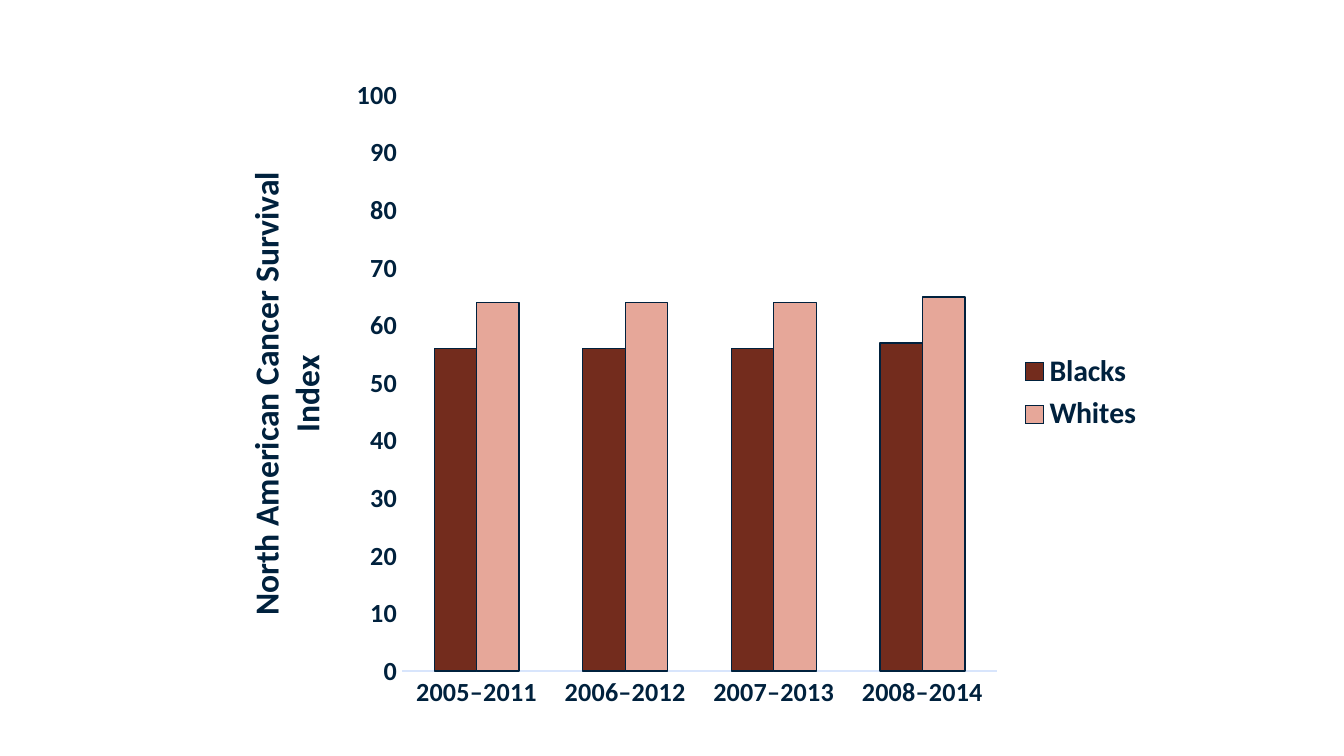
from dataclasses import dataclass

from lxml import etree
from pptx import Presentation
from pptx.chart.data import CategoryChartData
from pptx.dml.color import RGBColor
from pptx.enum import chart as ch
from pptx.oxml import ns
from pptx.util import Pt


@dataclass(frozen=True)
class Theme:
    font: str = "Calibri"
    ink: str = "00213D"
    baseline: str = "D8E5FC"
    blacks: str = "732C1D"
    whites: str = "E6A799"
    tick_size: int = 14
    legend_size: int = 16
    title_size: int = 18
    hairline: float = 0.75


THEME = Theme()
PERIODS = ("2005–2011", "2006–2012", "2007–2013", "2008–2014")
SURVIVAL = (
    ("Blacks", (56, 56, 56, 57), THEME.blacks),
    ("Whites", (64, 64, 64, 65), THEME.whites),
)


def format_font(font, size, color=THEME.ink, bold=True):
    font.name = THEME.font
    font.size = Pt(size)
    font.bold = bold
    font.color.rgb = RGBColor.from_string(color)


def write(frame, content, **font_format):
    frame.text = content
    for paragraph in frame.paragraphs:
        for run in paragraph.runs:
            format_font(run.font, **font_format)


def format_line(line, color):
    line.color.rgb = RGBColor.from_string(color)
    line.width = Pt(THEME.hairline)


def place_plot(chart, **fractions):
    """Fix the inner plot area as fractions of the chart's frame."""
    plot_area = chart.plots[0]._element.getparent()
    for old in plot_area.findall(ns.qn("c:layout")):
        plot_area.remove(old)
    layout = etree.Element(ns.qn("c:layout"))
    manual = etree.SubElement(layout, ns.qn("c:manualLayout"))
    settings = {"layoutTarget": "inner", "xMode": "edge", "yMode": "edge", **fractions}
    for tag, value in settings.items():
        etree.SubElement(manual, ns.qn(f"c:{tag}")).set("val", str(value))
    plot_area.insert(0, layout)


def style_axis(axis):
    axis.has_major_gridlines = False
    axis.major_tick_mark = axis.minor_tick_mark = ch.XL_TICK_MARK.NONE
    format_font(axis.tick_labels.font, THEME.tick_size)


def style_axes(chart):
    periods, index = chart.category_axis, chart.value_axis
    for axis in (periods, index):
        style_axis(axis)
    format_line(periods.format.line, THEME.baseline)
    index.format.line.fill.background()
    index.minimum_scale, index.maximum_scale, index.major_unit = 0, 100, 10
    write(index.axis_title.text_frame, "North American Cancer Survival Index",
          size=THEME.title_size)


def style_bars(plot):
    plot.gap_width = 150
    plot.overlap = 0
    plot.vary_by_categories = False
    for bars, (_, _, color) in zip(plot.series, SURVIVAL):
        bars.format.fill.solid()
        bars.format.fill.fore_color.rgb = RGBColor.from_string(color)
        format_line(bars.format.line, THEME.ink)


def style_legend(chart):
    chart.has_legend = True
    chart.legend.position = ch.XL_LEGEND_POSITION.RIGHT
    chart.legend.include_in_layout = False
    format_font(chart.legend.font, THEME.legend_size)


def add_survival_chart(slide, left, top, width, height):
    survival = CategoryChartData()
    survival.categories = PERIODS
    for name, values, _ in SURVIVAL:
        survival.add_series(name, values)
    chart = slide.shapes.add_chart(
        ch.XL_CHART_TYPE.COLUMN_CLUSTERED,
        Pt(left), Pt(top), Pt(width), Pt(height), survival).chart
    chart.has_title = False
    format_font(chart.font, THEME.tick_size)
    style_axes(chart)
    style_bars(chart.plots[0])
    style_legend(chart)
    place_plot(chart, x=0.2, y=0.045, w=0.63, h=0.88)


def main():
    deck = Presentation()
    deck.slide_width, deck.slide_height = Pt(720), Pt(405)
    slide = deck.slides.add_slide(deck.slide_layouts[6])
    add_survival_chart(slide, 114.5, 35.3, 505.4, 350.6)
    deck.save("out.pptx")


if __name__ == "__main__":
    main()
